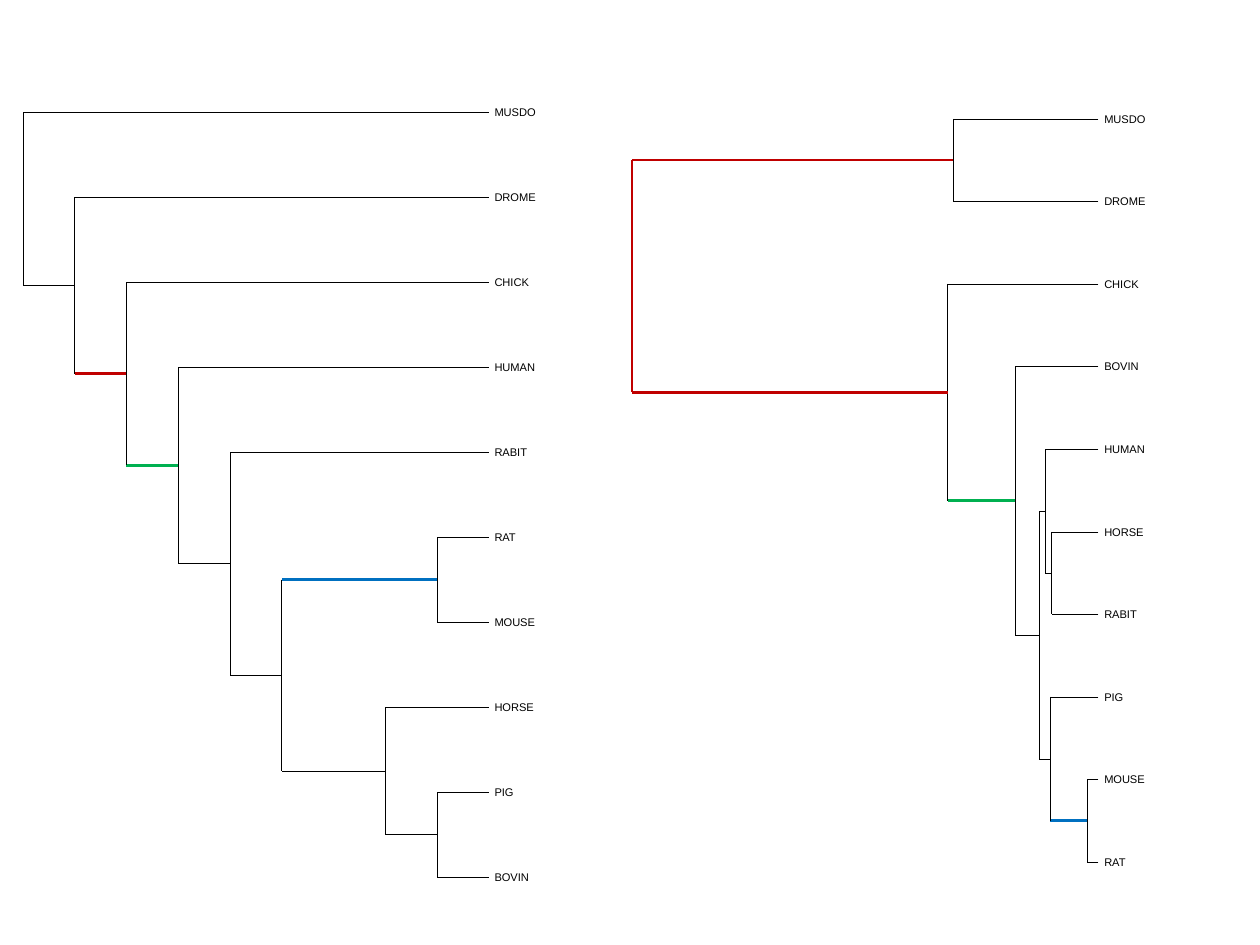
from dataclasses import dataclass

from lxml import etree
from pptx import Presentation
from pptx.dml.color import RGBColor
from pptx.enum.shapes import MSO_CONNECTOR
from pptx.enum.text import MSO_AUTO_SIZE
from pptx.oxml.ns import qn
from pptx.util import Cm, Pt

STRAIGHT = MSO_CONNECTOR.STRAIGHT
FIT_SHAPE = MSO_AUTO_SIZE.SHAPE_TO_FIT_TEXT

BLACK = RGBColor(0x00, 0x00, 0x00)
RED = RGBColor(0xC0, 0x00, 0x00)
GREEN = RGBColor(0x00, 0xB0, 0x50)
BLUE = RGBColor(0x00, 0x70, 0xC0)

HAIRLINE, SPINE_WIDTH, BRANCH_WIDTH = 0.25, 1, 1.75
LABEL_GAP, LABEL_HEIGHT = 0.13, 0.3
LABEL_WIDTHS = {
    "MUSDO": 0.94, "DROME": 0.94, "CHICK": 0.84, "HUMAN": 0.94, "RABIT": 0.78,
    "RAT": 0.52, "MOUSE": 0.94, "HORSE": 0.92, "PIG": 0.47, "BOVIN": 0.82,
}


@dataclass
class Clade:
    """A fork at x (cm); branch colours its stem, spine its vertical line."""
    x: float
    children: tuple
    branch: RGBColor = BLACK
    spine: RGBColor = BLACK


@dataclass
class Layout:
    """Where the tips of a tree end and how they are spread, in cm."""
    tip_x: float
    first_y: float
    last_y: float


def level_x(level):
    """Left tree: forks stand on evenly spaced levels."""
    return 0.51 + 1.15 * level


def add_line(s, x1, y1, x2, y2, color, width):
    line = s.shapes.add_connector(STRAIGHT, Cm(x1), Cm(y1), Cm(x2), Cm(y2))
    line.line.color.rgb = color
    line.line.width = Pt(width)
    etree.SubElement(line._element.spPr, qn("a:effectLst"))


def add_label(s, name, x, y):
    box = s.shapes.add_textbox(Cm(x), Cm(y - LABEL_HEIGHT / 2),
                               Cm(LABEL_WIDTHS[name]), Cm(LABEL_HEIGHT))
    tf = box.text_frame
    tf.margin_left = tf.margin_right = tf.margin_top = tf.margin_bottom = 0
    tf.word_wrap = False
    tf.auto_size = FIT_SHAPE
    p = tf.paragraphs[0]
    p.text = name
    p.font.name = "Arial"
    p.font.size = Pt(7)
    p.font.color.rgb = BLACK


def list_tips(node):
    if isinstance(node, str):
        return [node]
    return [tip for child in node.children for tip in list_tips(child)]


def add_clade(s, clade, layout, tip_ys):
    """Draw a fork and all beyond it; return the height of its stem."""
    ys = []
    for child in clade.children:
        if isinstance(child, str):
            x, y = layout.tip_x, tip_ys[child]
            color, width = BLACK, HAIRLINE
            add_label(s, child, x + LABEL_GAP, y)
        else:
            x, y = child.x, add_clade(s, child, layout, tip_ys)
            color = child.branch
            width = HAIRLINE if color == BLACK else BRANCH_WIDTH
        add_line(s, x, y, clade.x, y, color, width)
        ys.append(y)
    spine_width = HAIRLINE if clade.spine == BLACK else SPINE_WIDTH
    add_line(s, clade.x, ys[0], clade.x, ys[-1], clade.spine, spine_width)
    return (ys[0] + ys[-1]) / 2


def add_tree(s, root, layout):
    tips = list_tips(root)
    step = (layout.last_y - layout.first_y) / (len(tips) - 1)
    tip_ys = {tip: layout.first_y + i * step for i, tip in enumerate(tips)}
    add_clade(s, root, layout, tip_ys)


def build_cladogram():
    rodents = Clade(level_x(8), ("RAT", "MOUSE"), BLUE)
    ungulates = Clade(level_x(7), ("HORSE", Clade(level_x(8), ("PIG", "BOVIN"))))
    inner = Clade(level_x(5), (rodents, ungulates))
    mammals = Clade(level_x(3), ("HUMAN", Clade(level_x(4), ("RABIT", inner))), GREEN)
    vertebrates = Clade(level_x(2), ("CHICK", mammals), RED)
    return Clade(level_x(0), ("MUSDO", Clade(level_x(1), ("DROME", vertebrates))))


def build_phylogram():
    flies = Clade(21.18, ("MUSDO", "DROME"), RED)
    human_group = Clade(23.22, ("HUMAN", Clade(23.37, ("HORSE", "RABIT"))))
    rodents = Clade(24.16, ("MOUSE", "RAT"), BLUE)
    pig_group = Clade(23.34, ("PIG", rodents))
    mammals = Clade(22.56, ("BOVIN", Clade(23.1, (human_group, pig_group))), GREEN)
    vertebrates = Clade(21.06, ("CHICK", mammals), RED)
    return Clade(14.05, (flies, vertebrates), spine=RED)


def main():
    prs = Presentation()
    prs.slide_width, prs.slide_height = Cm(28), Cm(21)
    s = prs.slides.add_slide(prs.slide_layouts[6])
    add_tree(s, build_cladogram(), Layout(level_x(9), 2.49, 19.49))
    add_tree(s, build_phylogram(), Layout(24.41, 2.64, 19.16))
    prs.save("out.pptx")


if __name__ == "__main__":
    main()
